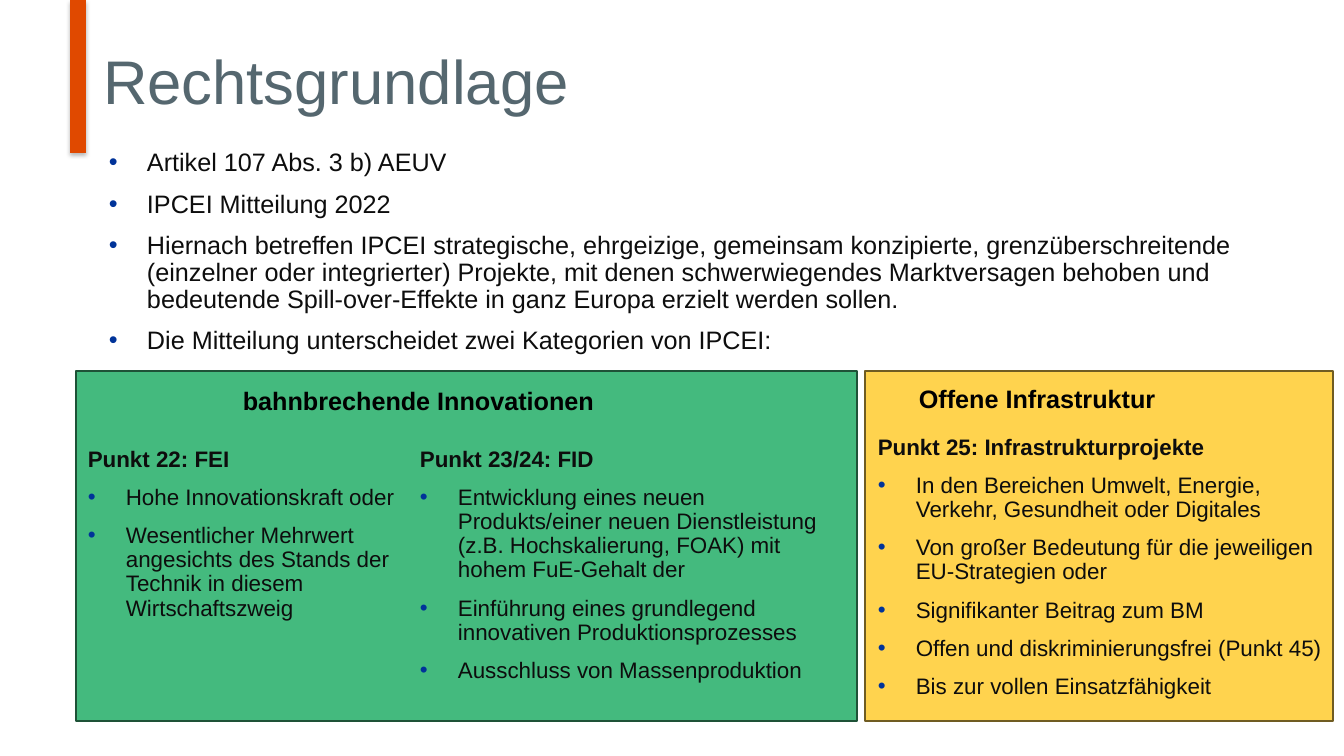
"""Build the slide on the legal basis of IPCEI projects."""
import pptx
import pptx.dml.color
import pptx.enum.shapes
import pptx.enum.text
import pptx.util
from lxml import etree
from pptx.oxml.ns import qn

RGBColor = pptx.dml.color.RGBColor
SCALE = 914400 / 100.8
INDENT = 38
FONT = "Arial"
WHITE = RGBColor(0xFF, 0xFF, 0xFF)
BLACK = RGBColor(0x00, 0x00, 0x00)
TEXT = RGBColor(0x0D, 0x0D, 0x0D)
SLATE = RGBColor(0x55, 0x67, 0x6F)
BLUE = RGBColor(0x00, 0x33, 0x99)
ORANGE = RGBColor(0xE0, 0x49, 0x00)
GREEN = RGBColor(0x44, 0xBA, 0x7E)
DARK_GREEN = RGBColor(0x1E, 0x52, 0x37)
YELLOW = RGBColor(0xFF, 0xD3, 0x4E)
DARK_YELLOW = RGBColor(0x70, 0x5C, 0x22)

LEGAL_BASIS = [
    "Artikel 107 Abs. 3 b) AEUV",
    "IPCEI Mitteilung 2022",
    "Hiernach betreffen IPCEI strategische, ehrgeizige, gemeinsam konzipierte, "
    "grenzüberschreitende (einzelner oder integrierter) Projekte, mit denen "
    "schwerwiegendes Marktversagen behoben und bedeutende Spill-over-Effekte in "
    "ganz Europa erzielt werden sollen.",
    "Die Mitteilung unterscheidet zwei Kategorien von IPCEI:",
]
PANELS = [
    ((76, 371, 781, 350), GREEN, DARK_GREEN),
    ((865, 371, 468, 350), YELLOW, DARK_YELLOW),
]
HEADINGS = [
    ((233, 380, 382, 40), "bahnbrechende Innovationen"),
    ((909, 378, 259, 41), "Offene Infrastruktur"),
]
COLUMNS = [
    ((78, 443, 347, 203), "Punkt 22: FEI", [
        "Hohe Innovationskraft oder",
        "Wesentlicher Mehrwert angesichts des Stands der Technik in diesem "
        "Wirtschaftszweig",
    ]),
    ((410, 443, 445, 300), "Punkt 23/24: FID", [
        "Entwicklung eines neuen Produkts/einer neuen Dienstleistung (z.B. "
        "Hochskalierung, FOAK) mit hohem FuE-Gehalt der",
        "Einführung eines grundlegend innovativen Produktionsprozesses",
        "Ausschluss von Massenproduktion",
    ]),
    ((868, 431, 476, 263), "Punkt 25: Infrastrukturprojekte", [
        "In den Bereichen Umwelt, Energie, Verkehr, Gesundheit oder Digitales",
        "Von großer Bedeutung für die jeweiligen EU-Strategien oder",
        "Signifikanter Beitrag zum BM",
        "Offen und diskriminierungsfrei (Punkt 45)",
        "Bis zur vollen Einsatzfähigkeit",
    ]),
]


def px(length):
    """Turn pixels into EMU."""
    return pptx.util.Emu(round(length * SCALE))


def place(shape, box):
    """Move and size a shape."""
    shape.left, shape.top, shape.width, shape.height = map(px, box)


def style(paragraph, size, color, bold=False):
    """Set the font of a paragraph."""
    font = paragraph.font
    font.name, font.size, font.bold = FONT, pptx.util.Pt(size), bold
    font.color.rgb = color


def add_bullet(paragraph):
    """Give a paragraph a blue bullet with a hanging indent."""
    properties = paragraph._p.get_or_add_pPr()
    properties.set("marL", str(px(INDENT)))
    properties.set("indent", str(-px(INDENT)))
    bullet_color = etree.SubElement(properties, qn("a:buClr"))
    etree.SubElement(bullet_color, qn("a:srgbClr"), val=str(BLUE))
    etree.SubElement(properties, qn("a:buFont"), typeface=FONT)
    etree.SubElement(properties, qn("a:buChar"), char="•")


def write_list(frame, items, size, heading=None):
    """Fill a text frame with an optional bold heading and bullets."""
    lines = ([heading] if heading else []) + items
    for number, line in enumerate(lines):
        paragraph = frame.add_paragraph() if number else frame.paragraphs[0]
        paragraph.text = line
        paragraph.line_spacing = 0.9
        paragraph.space_before = pptx.util.Pt(10 if number else 0)
        if line != heading:
            add_bullet(paragraph)
        style(paragraph, size, TEXT, bold=line == heading)


def add_rectangle(slide, box, fill, line=None):
    """Add a filled rectangle with an optional outline."""
    rectangle = slide.shapes.add_shape(
        pptx.enum.shapes.MSO_SHAPE.RECTANGLE, *map(px, box))
    rectangle.shadow.inherit = False
    rectangle.fill.solid()
    rectangle.fill.fore_color.rgb = fill
    if line is None:
        rectangle.line.fill.background()
    else:
        rectangle.line.color.rgb = line
        rectangle.line.width = pptx.util.Pt(1)
    return rectangle


def add_accent_bar(slide):
    """Add the orange bar with its soft shadow."""
    bar = add_rectangle(slide, (70, 0, 16, 153), ORANGE)
    effects = bar._element.spPr.find(qn("a:effectLst"))
    shadow = etree.SubElement(
        effects, qn("a:outerShdw"), blurRad=str(pptx.util.Pt(3)),
        dist=str(pptx.util.Pt(2)), dir="5400000", rotWithShape="0")
    shadow_color = etree.SubElement(shadow, qn("a:srgbClr"), val=str(BLACK))
    etree.SubElement(shadow_color, qn("a:alpha"), val="27000")


def add_heading(slide, box, text):
    """Add the bold heading of a panel."""
    frame = slide.shapes.add_textbox(*map(px, box)).text_frame
    frame.word_wrap = False
    frame.auto_size = pptx.enum.text.MSO_AUTO_SIZE.SHAPE_TO_FIT_TEXT
    frame.text = text
    style(frame.paragraphs[0], 18, BLACK, bold=True)


def add_column(slide, box, heading, items):
    """Add a text column with a heading and bullets."""
    frame = slide.shapes.add_textbox(*map(px, box)).text_frame
    frame.word_wrap = True
    write_list(frame, items, 16, heading)


def fill_title(title):
    """Write the slide title."""
    place(title, (93, 40, 1159, 90))
    title.fill.solid()
    title.fill.fore_color.rgb = WHITE
    frame = title.text_frame
    frame.text = "Rechtsgrundlage"
    frame.auto_size = pptx.enum.text.MSO_AUTO_SIZE.NONE
    frame.vertical_anchor = pptx.enum.text.MSO_ANCHOR.MIDDLE
    heading = frame.paragraphs[0]
    heading.alignment = pptx.enum.text.PP_ALIGN.LEFT
    heading.line_spacing = 0.9
    style(heading, 44, SLATE)


def fill_body(body):
    """Write the list of legal foundations."""
    place(body, (93, 134, 1159, 215))
    frame = body.text_frame
    frame.auto_size = pptx.enum.text.MSO_AUTO_SIZE.NONE
    frame.margin_left = frame.margin_right = px(16)
    frame.margin_top = frame.margin_bottom = px(16)
    write_list(frame, LEGAL_BASIS, 18)


def main():
    """Assemble and save the slide."""
    presentation = pptx.Presentation()
    presentation.slide_width, presentation.slide_height = px(1344), px(756)
    slide = presentation.slides.add_slide(presentation.slide_layouts[1])
    add_accent_bar(slide)
    fill_title(slide.shapes.title)
    fill_body(slide.placeholders[1])
    for box, fill, line in PANELS:
        add_rectangle(slide, box, fill, line)
    for box, heading, items in COLUMNS:
        add_column(slide, box, heading, items)
    for box, text in HEADINGS:
        add_heading(slide, box, text)
    presentation.save("out.pptx")


if __name__ == "__main__":
    main()
